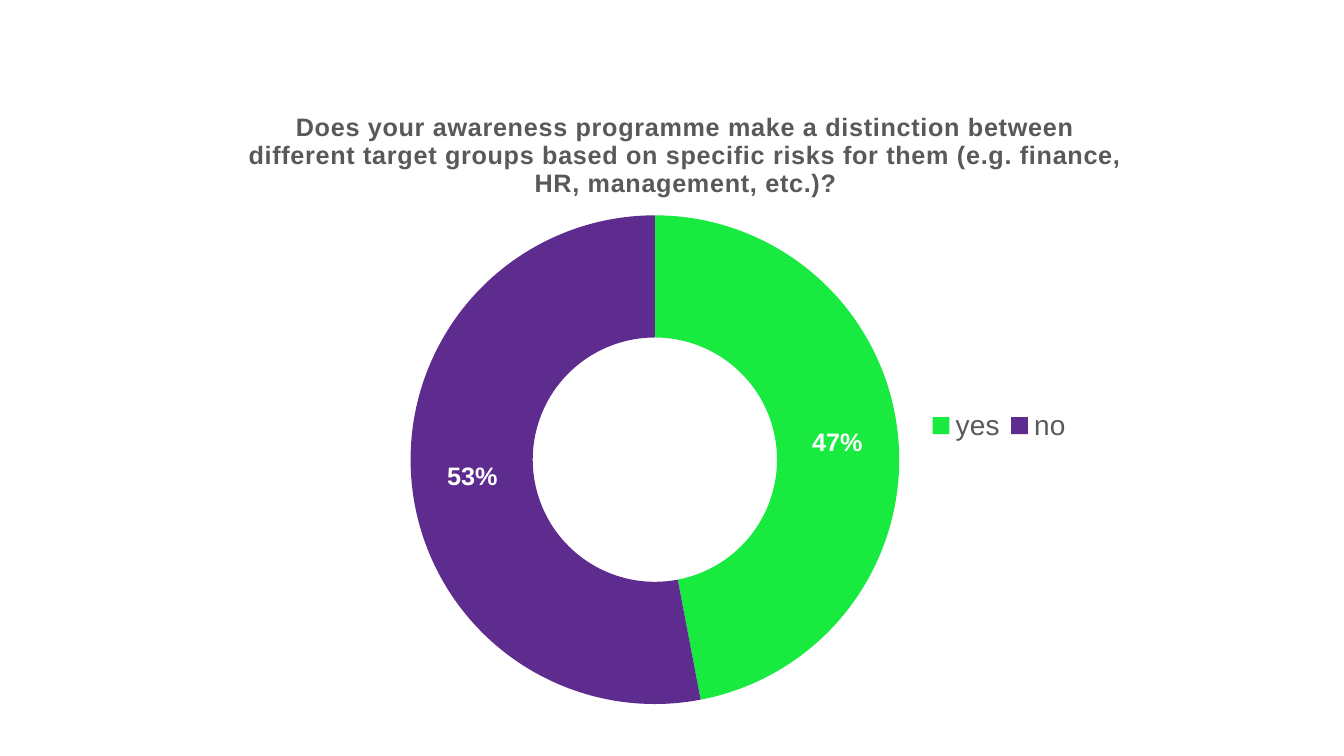
from dataclasses import dataclass

from lxml import etree
from pptx import Presentation
from pptx import util as u
from pptx.chart import data as chart_data
from pptx.dml.color import RGBColor
from pptx.enum import chart as chart_enum
from pptx.oxml import ns

FONT = "Arial"
GREEN = RGBColor(0x18, 0xEA, 0x3F)
PURPLE = RGBColor(0x5E, 0x2B, 0x8F)
GREY = RGBColor(0x59, 0x59, 0x59)
WHITE = RGBColor(0xFF, 0xFF, 0xFF)
BLACK = RGBColor(0, 0, 0)

QUESTION = (
    "Does your awareness programme make a distinction between different target "
    "groups based on specific risks for them (e.g. finance, HR, management, etc.)?"
)


@dataclass(frozen=True)
class Answer:
    label: str
    percent: int
    color: RGBColor


ANSWERS = [Answer("yes", 47, GREEN), Answer("no", 53, PURPLE)]


def format_font(font, size: float, color: RGBColor, bold: bool = False) -> None:
    font.name = FONT
    font.size = u.Pt(size)
    font.bold = bold
    font.color.rgb = color


def write_text(frame, text: str, *, size: float, color: RGBColor,
               bold: bool = False, spacing: int = 0) -> None:
    """Write one run; spacing is in hundredths of a point."""
    run = frame.paragraphs[0].add_run()
    run.text = text
    format_font(run.font, size, color, bold)
    run.font._element.set("spc", str(spacing))


def place(element, index: int, inner: bool = False, **fractions: float) -> None:
    """Give a chart part a manual layout in fractions of the chart area."""
    for old_layout in element.findall(ns.qn("c:layout")):
        element.remove(old_layout)
    layout = etree.Element(ns.qn("c:layout"))
    manual = etree.SubElement(layout, ns.qn("c:manualLayout"))
    settings = {"layoutTarget": "inner"} if inner else {}
    settings |= {"xMode": "edge", "yMode": "edge"}
    settings |= {name: str(value) for name, value in fractions.items()}
    for name, value in settings.items():
        etree.SubElement(manual, ns.qn(f"c:{name}")).set("val", value)
    element.insert(index, layout)


def add_answer_chart(slide, answers: list[Answer]) -> None:
    data = chart_data.CategoryChartData()
    data.categories = [answer.label for answer in answers]
    data.add_series("Series 1", [answer.percent for answer in answers])
    chart = slide.shapes.add_chart(
        chart_enum.XL_CHART_TYPE.DOUGHNUT,
        u.Cm(2.51), u.Cm(0.94), u.Cm(27.99), u.Cm(17.17), data,
    ).chart
    format_font(chart.font, 10, BLACK)

    chart.has_title = True
    title = chart.chart_title
    write_text(title.text_frame, QUESTION, size=18, color=GREY, bold=True, spacing=50)
    title.include_in_layout = False
    place(title._element, 1, x=0.13, y=0.1)

    chart.has_legend = True
    legend = chart.legend
    legend.position = chart_enum.XL_LEGEND_POSITION.TOP
    legend.include_in_layout = False
    format_font(legend.font, 20, GREY)
    place(legend._element, 1, x=0.74, y=0.54, w=0.14, h=0.06)

    plot = chart.plots[0]
    place(plot._element.getparent(), 0, inner=True, x=0.28, y=0.26, w=0.44, h=0.72)
    plot.has_data_labels = True
    labels = plot.data_labels
    labels.show_percentage = True
    labels.show_value = False
    labels.number_format = "0%"
    labels.number_format_is_linked = False
    format_font(labels.font, 18, WHITE, bold=True)

    for index, answer in enumerate(answers):
        point_format = plot.series[0].points[index].format
        point_format.fill.solid()
        point_format.fill.fore_color.rgb = answer.color
        point_format.line.fill.background()


def main() -> None:
    presentation = Presentation()
    presentation.slide_width = u.Cm(33.87)
    presentation.slide_height = u.Cm(19.05)
    slide = presentation.slides.add_slide(presentation.slide_layouts[6])
    add_answer_chart(slide, ANSWERS)
    presentation.save("out.pptx")


if __name__ == "__main__":
    main()
